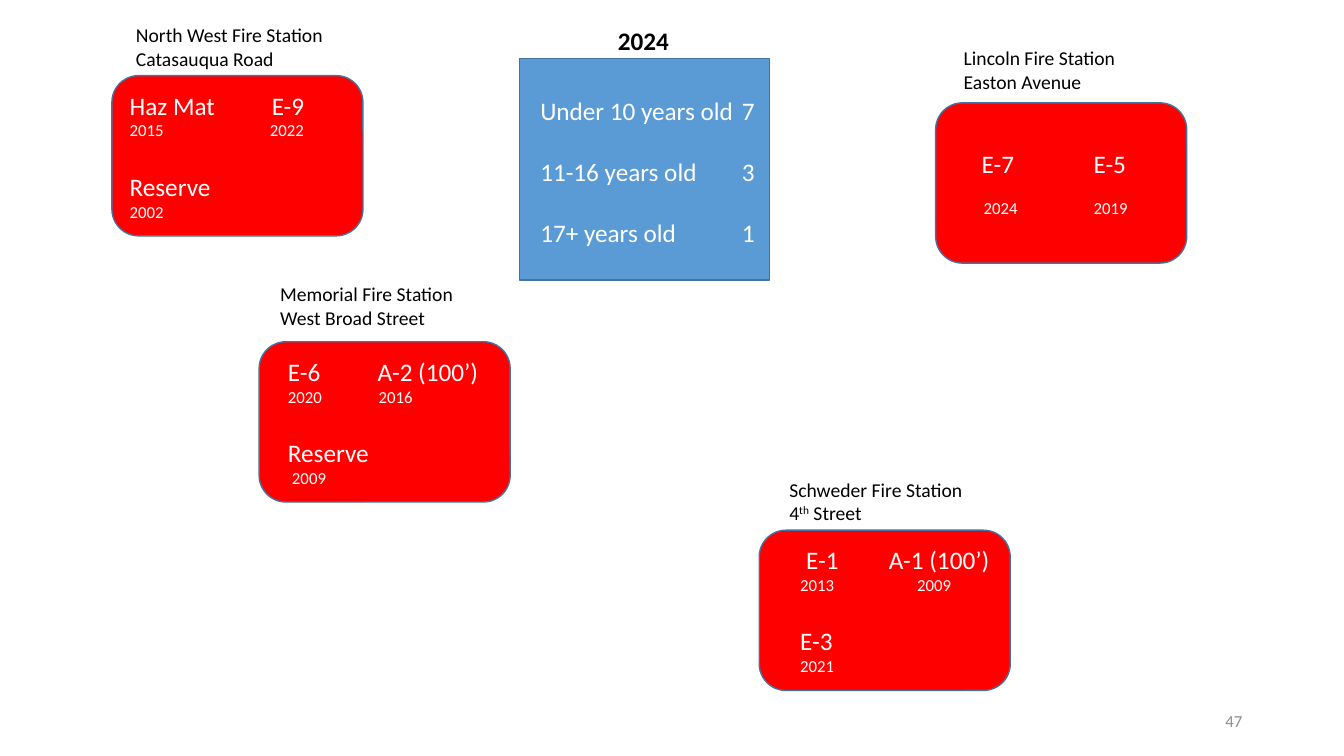
from pptx import Presentation
from pptx.dml.color import RGBColor
from pptx.enum.shapes import MSO_SHAPE as SHAPE
from pptx.enum.text import MSO_ANCHOR as ANCHOR, PP_ALIGN as ALIGN
from pptx.oxml.ns import qn
from pptx.util import Pt
from lxml.etree import SubElement

PX = 9144  # EMU per px, 100 px to the inch
BLANK_LINE = 22  # points
UNIT, YEAR = 18, 12  # text sizes inside a station


def rgb(value):
    return RGBColor.from_string(value)


class Page:
    font, outline = "Calibri", "43739E"

    def __init__(self, prs):
        self.slide = prs.slides.add_slide(prs.slide_layouts[6])

    def shape(self, kind, box, fill):
        sp = self.slide.shapes.add_shape(kind, *(v * PX for v in box))
        sp.shadow.inherit = False
        sp.fill.solid()
        sp.fill.fore_color.rgb = rgb(fill)
        sp.line.color.rgb = rgb(self.outline)
        sp.line.width = Pt(1)
        return sp

    def paragraph(self, tf, text, size, color, tabs=(), before=0,
                  bold=False, align=ALIGN.LEFT):
        """Fill the first paragraph or add one; ^ marks a superscript part."""
        p = tf.paragraphs[0] if not tf.paragraphs[0].runs else tf.add_paragraph()
        p.alignment = align
        p.space_before = Pt(before)
        if tabs:
            stops = SubElement(p._p.get_or_add_pPr(), qn("a:tabLst"))
            for x in tabs:
                SubElement(stops, qn("a:tab"), pos=str(x * PX), algn="l")
        p.font.name, p.font.size, p.font.bold = self.font, Pt(size), bold
        p.font.color.rgb = rgb(color)
        for i, part in enumerate(text.split("^")):
            r = p.add_run()
            r.text = part
            if i % 2:
                r.font._element.set("baseline", "30000")

    def text(self, box, lines, size, color, anchor=ANCHOR.TOP, gap=0, **style):
        sp = self.slide.shapes.add_textbox(*(v * PX for v in box))
        tf = sp.text_frame
        tf.word_wrap = True
        tf.vertical_anchor = anchor
        for i, line in enumerate(lines):
            self.paragraph(tf, line, size, color, before=gap if i else 0, **style)

    def station(self, corner, rows):
        """Each row is size, space before, then (x, text) pairs."""
        sp = self.shape(SHAPE.ROUNDED_RECTANGLE, (*corner, 249, 159), "FF0000")
        tf = sp.text_frame
        tf.word_wrap = True
        tf.margin_right = 0
        tf.vertical_anchor = ANCHOR.MIDDLE
        for size, before, *items in rows:
            tabs = [x for x, _ in items if x]
            text = "".join(("\t" if x else "") + word for x, word in items)
            self.paragraph(tf, text, size, "FFFFFF", tabs, before)


STATIONS = [
    ((111, 75), (125, 18, 221, 57), ["North West Fire Station", "Catasauqua Road"], [
        (UNIT, 0, (0, "Haz Mat"), (141, "E-9")),
        (YEAR, 0, (0, "2015"), (139, "2022")),
        (UNIT, BLANK_LINE, (0, "Reserve")),
        (YEAR, 0, (0, "2002"))]),
    ((928, 102), (946, 41, 179, 57), ["Lincoln Fire Station", "Easton Avenue"], [
        (UNIT, 0, (28, "E-7"), (139, "E-5")),
        (YEAR, 14, (30, "2024"), (139, "2019"))]),
    ((257, 339), (268, 275, 294, 57), ["Memorial Fire Station", "West Broad Street"], [
        (UNIT, 0, (11, "E-6"), (100, "A-2 (100’)")),
        (YEAR, 0, (11, "2020"), (101, "2016")),
        (UNIT, BLANK_LINE, (11, "Reserve")),
        (YEAR, 0, (15, "2009"))]),
    ((753, 526), (773, 469, 234, 57), ["Schweder Fire Station", "4^th^ Street"], [
        (UNIT, 0, (29, "E-1"), (111, "A-1 (100’)")),
        (YEAR, 0, (23, "2013"), (139, "2009")),
        (UNIT, BLANK_LINE, (23, "E-3")),
        (YEAR, 0, (23, "2021"))]),
]


def main():
    prs = Presentation()
    prs.slide_width, prs.slide_height = 1333 * PX, 750 * PX
    page = Page(prs)

    # Age summary
    page.shape(SHAPE.RECTANGLE, (515, 58, 248, 220), "5B9BD5")
    ages = ["Under 10 years old\t7", "11-16 years old\t3", "17+ years old\t1"]
    page.text((526, 90, 248, 162), ages, 18, "FFFFFF", gap=BLANK_LINE, tabs=[200])
    page.text((603, 20, 84, 40), ["2024"], 18, "000000", bold=True)

    # Fire stations with their vehicles
    for corner, label_box, label, rows in STATIONS:
        page.station(corner, rows)
        page.text(label_box, label, 14, "000000")

    # Slide number
    page.text((942, 695, 300, 40), ["47"], 12, "8C8C8C", ANCHOR.MIDDLE,
              align=ALIGN.RIGHT)

    prs.save("out.pptx")


if __name__ == "__main__":
    main()
